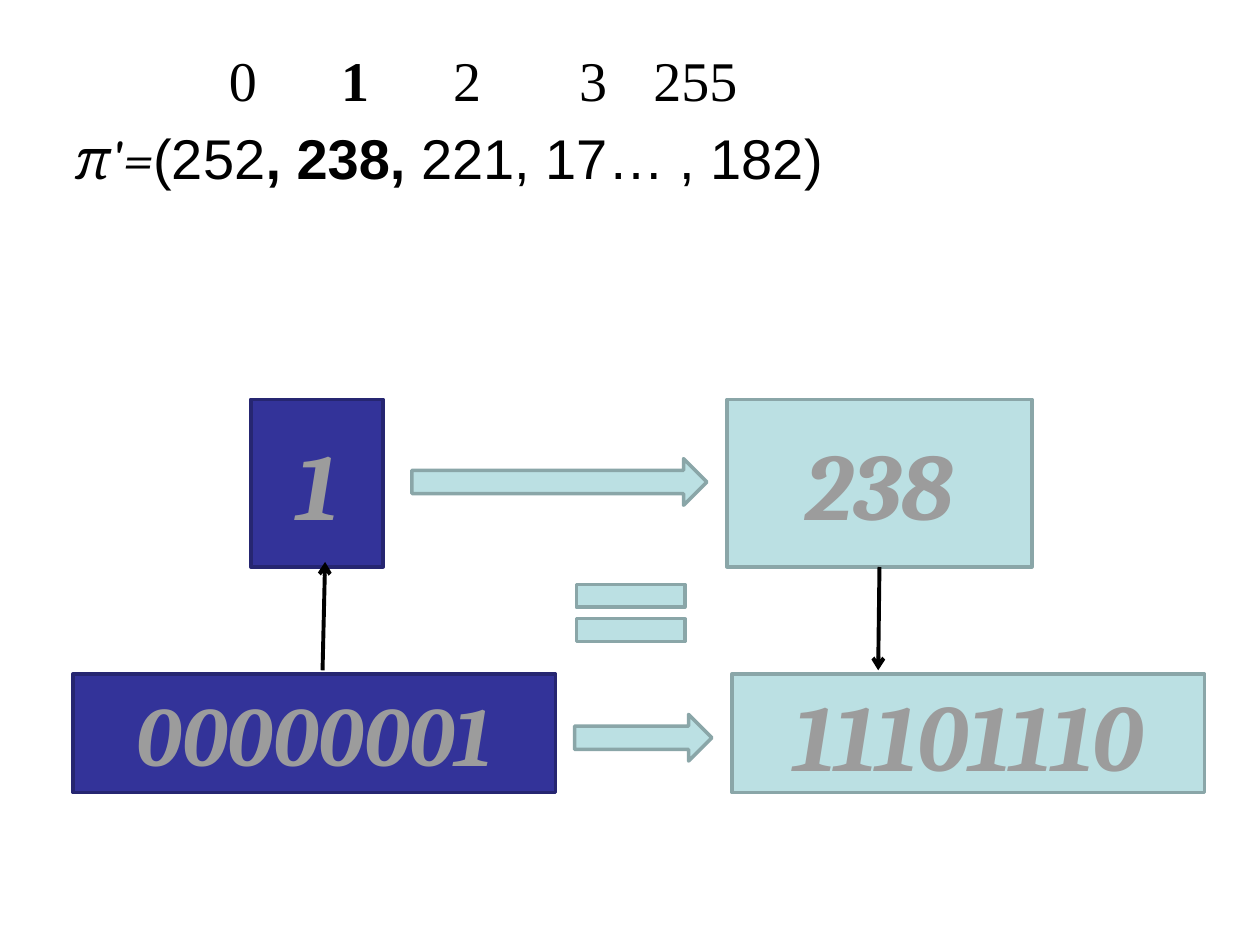
from lxml.etree import SubElement
from pptx import Presentation
from pptx.dml.color import RGBColor
from pptx.enum.shapes import MSO_CONNECTOR, MSO_SHAPE
from pptx.enum.text import MSO_ANCHOR, PP_ALIGN
from pptx.oxml.ns import qn
from pptx.util import Inches, Pt

NAVY, AQUA = ("333399", "262671"), ("BBE0E3", "8AA6A8")  # fill, outline
BLACK, GREY = "000000", "9C9C9C"

# Centre of each index, measured from the left edge of the text
INDEX_STOPS = [1.33, 2.22, 3.11, 4.11, 4.92]
INDEX_FORMAT = {"name": "Times New Roman", "bold": False}
VALUE_FORMAT = {"name": "Arial", "bold": False}
PERMUTATION = [
    [("\t0", INDEX_FORMAT), ("\t1", INDEX_FORMAT | {"bold": True}),
     ("\t2\t3\t255", INDEX_FORMAT)],
    [("π'=", {"name": "Cambria", "italic": True}), ("(252", VALUE_FORMAT),
     (", 238, ", VALUE_FORMAT | {"bold": True}),
     ("221, 17… , 182)", VALUE_FORMAT)],
]

# text, text size, left, top, width, height, colours
NUMBERS = [
    ("1", 54, 1.99, 3.17, 1.05, 1.33, NAVY),
    ("238", 54, 5.77, 3.17, 2.42, 1.33, AQUA),
    ("00000001", 48, 0.58, 5.35, 3.83, 0.94, NAVY),
    ("11101110", 54, 5.81, 5.35, 3.75, 0.94, AQUA),
]
SYMBOLS = [
    (MSO_SHAPE.RIGHT_ARROW, 3.27, 3.64, 2.34, 0.37),
    (MSO_SHAPE.MATH_EQUAL, 4.42, 4.48, 1.17, 0.77),
    (MSO_SHAPE.RIGHT_ARROW, 4.56, 5.67, 1.09, 0.37),
]
TO_DECIMAL = (2.56, 5.32, 2.58, 4.46)
TO_BINARY = (6.98, 4.5, 6.97, 5.32)


def rgb(color):
    return RGBColor.from_string(color)


def add_run(paragraph, text, size, color, formats):
    run = paragraph.add_run()
    run.text = text
    run.font.size = Pt(size)
    run.font.color.rgb = rgb(color)
    for attribute, value in formats.items():
        setattr(run.font, attribute, value)


def add_block(slide, kind, box, colors):
    block = slide.shapes.add_shape(kind, *map(Inches, box))
    block.shadow.inherit = False
    fill, outline = colors
    block.fill.solid()
    block.fill.fore_color.rgb = rgb(fill)
    block.line.color.rgb = rgb(outline)
    block.line.width = Pt(2)
    return block


def add_number(slide, text, size, *box, colors):
    block = add_block(slide, MSO_SHAPE.RECTANGLE, box, colors)
    block.text_frame.vertical_anchor = MSO_ANCHOR.MIDDLE
    paragraph = block.text_frame.paragraphs[0]
    paragraph.alignment = PP_ALIGN.CENTER
    add_run(paragraph, text, size, GREY,
            {"name": "Cambria", "bold": True, "italic": True})
    return block


def add_arrow(slide, ends):
    arrow = slide.shapes.add_connector(MSO_CONNECTOR.STRAIGHT, *map(Inches, ends))
    arrow.line.color.rgb = rgb(BLACK)
    arrow.line.width = Pt(2.25)
    SubElement(arrow.line._get_or_add_ln(), qn("a:tailEnd"), type="arrow")
    SubElement(arrow._element.spPr, qn("a:effectLst"))
    return arrow


def add_permutation(slide):
    frame = slide.shapes.add_textbox(
        Inches(0.5), Inches(0.31), Inches(9), Inches(1.4)).text_frame
    frame.word_wrap = True
    for number, runs in enumerate(PERMUTATION):
        paragraph = frame.add_paragraph() if number else frame.paragraphs[0]
        paragraph.space_before = Pt(6.4)
        for text, formats in runs:
            add_run(paragraph, text, 32, BLACK, formats)
    stops = SubElement(frame.paragraphs[0]._p.get_or_add_pPr(), qn("a:tabLst"))
    for stop in INDEX_STOPS:
        SubElement(stops, qn("a:tab"), pos=str(Inches(stop)), algn="ctr")


def main():
    presentation = Presentation()
    presentation.slide_width, presentation.slide_height = Inches(10), Inches(7.5)
    slide = presentation.slides.add_slide(presentation.slide_layouts[6])
    add_permutation(slide)
    numbers = {}
    for text, *size_and_box, colors in NUMBERS:
        numbers[text] = add_number(slide, text, *size_and_box, colors=colors)
    for kind, *box in SYMBOLS:
        add_block(slide, kind, box, AQUA)
    add_arrow(slide, TO_DECIMAL)
    add_arrow(slide, TO_BINARY).begin_connect(numbers["238"], 2)
    presentation.save("out.pptx")


if __name__ == "__main__":
    main()
